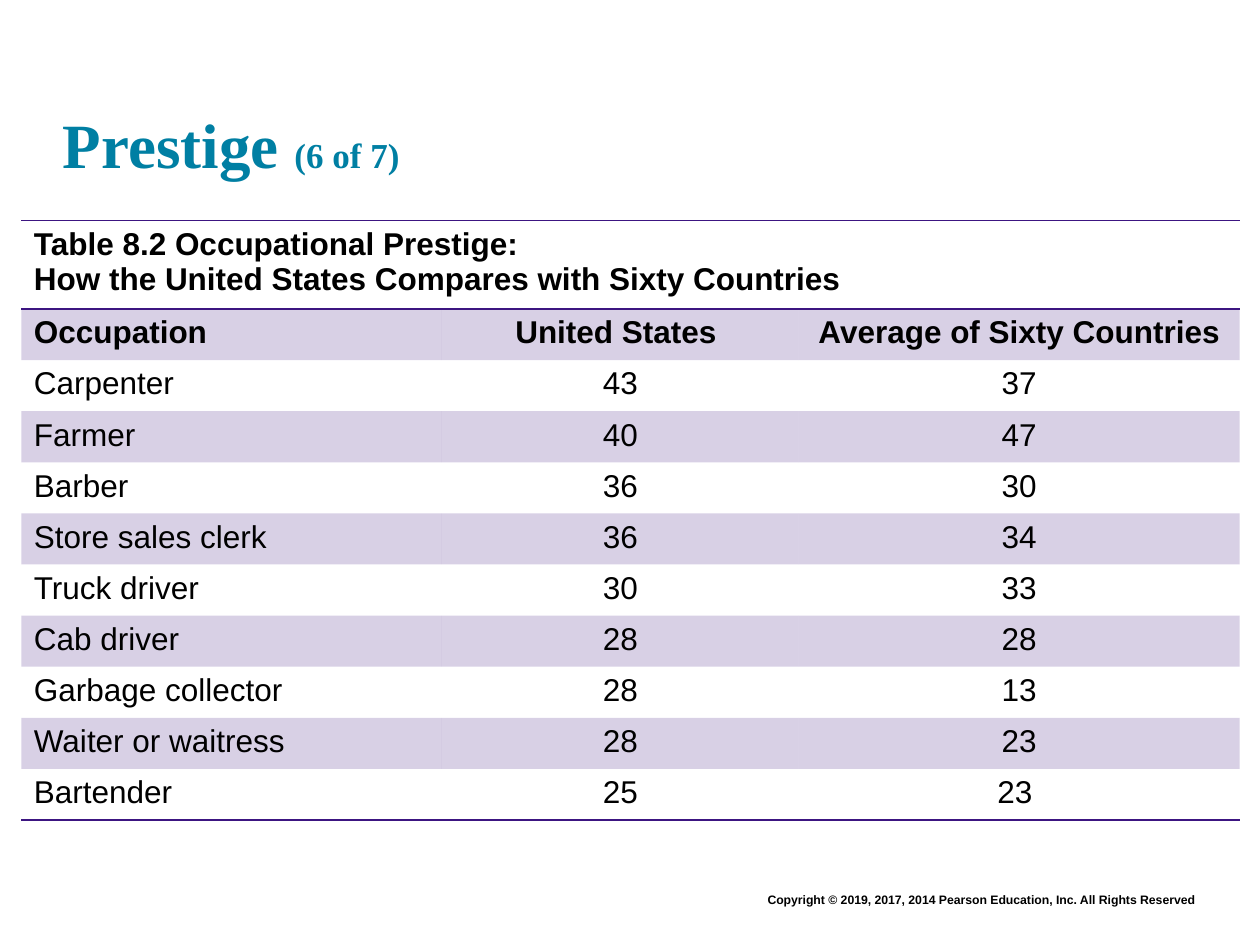
import pptx
import pptx.dml.color
import pptx.enum.text
import pptx.oxml
import pptx.oxml.ns
import pptx.util
from lxml import etree

Cm, Pt = pptx.util.Cm, pptx.util.Pt
RGBColor = pptx.dml.color.RGBColor
ALIGN = pptx.enum.text.PP_ALIGN
ANCHOR = pptx.enum.text.MSO_ANCHOR
qn = pptx.oxml.ns.qn

TEAL = RGBColor(0x00, 0x7F, 0xA3)
PURPLE = RGBColor(0x3C, 0x15, 0x81)
BLACK = RGBColor(0x00, 0x00, 0x00)

# Content
TITLE = [("Prestige ", 36), ("(6 of 7)", 20)]
COPYRIGHT = "Copyright © 2019, 2017, 2014 Pearson Education, Inc. All Rights Reserved"
CAPTION = ["Table 8.2 Occupational Prestige:",
           "How the United States Compares with Sixty Countries"]
ROWS = [
    ("Occupation", "United States ", "Average of Sixty Countries"),
    ("Carpenter", "43", "37"),
    ("Farmer", "40", "47"),
    ("Barber", "36", "30"),
    ("Store sales clerk", "36", "34"),
    ("Truck driver", "30", "33"),
    ("Cab driver", "28", "28"),
    ("Garbage collector", "28", "13"),
    ("Waiter or waitress", "28", "23"),
    ("Bartender", "25", "23 "),
]
COL_WIDTHS = [8.48, 7.19, 8.89]
CAPTION_HEIGHT, ROW_HEIGHT = 1.68, 1.03
NO_STYLE = "{2D5ABB26-0587-4C30-8999-92F81FD0307C}"

TITLE_FONT = {"name": "Times New Roman", "bold": True}
BODY_FONT = {"name": "Arial", "size": Pt(18)}
COPYRIGHT_FONT = {"name": "Arial", "size": Pt(7), "bold": True}


def add_run(p, text, color, **fmt):
    r = p.add_run()
    r.text = text
    for name, value in fmt.items():
        setattr(r.font, name, value)
    r.font.color.rgb = color


def add_text_box(s, left, top, width, height, **fmt):
    tf = s.shapes.add_textbox(Cm(left), Cm(top), Cm(width), Cm(height)).text_frame
    for name, value in {"word_wrap": True, **fmt}.items():
        setattr(tf, name, value)
    return tf.paragraphs[0]


def add_border(cell, side):
    ln = etree.SubElement(cell._tc.get_or_add_tcPr(), qn(f"a:{side}"), w=str(Pt(1)))
    fill = etree.SubElement(ln, qn("a:solidFill"))
    etree.SubElement(fill, qn("a:srgbClr"), val=str(PURPLE))


def shade(cell):
    cell.fill.solid()
    cell.fill.fore_color.rgb = PURPLE
    color = cell._tc.tcPr.find(".//" + qn("a:solidFill") + "[last()]/" + qn("a:srgbClr"))
    etree.SubElement(color, qn("a:alpha"), val="20000")


prs = pptx.Presentation()
prs.slide_width, prs.slide_height = Cm(25.4), Cm(19.05)
s = prs.slides.add_slide(prs.slide_layouts[6])

# Copyright line
p = add_text_box(s, 4.45, 17.86, 19.89, 0.56)
p.alignment = ALIGN.RIGHT
add_run(p, COPYRIGHT, BLACK, **COPYRIGHT_FONT)

# Title
p = add_text_box(s, 1.27, 0.61, 23.7, 3.05, vertical_anchor=ANCHOR.BOTTOM,
                 margin_left=0, margin_top=0, margin_right=0, margin_bottom=0)
for text, size in TITLE:
    add_run(p, text, TEAL, size=Pt(size), **TITLE_FONT)

# Table grid
heights = [CAPTION_HEIGHT] + [ROW_HEIGHT] * len(ROWS)
table = s.shapes.add_table(len(heights), len(COL_WIDTHS), Cm(0.43), Cm(4.45),
                           Cm(sum(COL_WIDTHS)), Cm(sum(heights))).table
table.first_row = table.horz_banding = False
table._tbl.tblPr.find(qn("a:tableStyleId")).text = NO_STYLE
for column, width in zip(table.columns, COL_WIDTHS):
    column.width = Cm(width)
for row, height in zip(table.rows, heights):
    row.height = Cm(height)

# Caption row
caption = table.cell(0, 0)
caption.merge(table.cell(0, len(COL_WIDTHS) - 1))
for cell in table.rows[0].cells:
    add_border(cell, "lnT")
    add_border(cell, "lnB")
    cell.fill.background()
tf = caption.text_frame
for i, line in enumerate(CAPTION):
    p = tf.add_paragraph() if i else tf.paragraphs[0]
    add_run(p, line, BLACK, bold=True, **BODY_FONT)

# Heading and data rows, every other one shaded
for i, values in enumerate(ROWS):
    for j, value in enumerate(values):
        cell = table.cell(i + 1, j)
        if i == len(ROWS) - 1:
            add_border(cell, "lnB")
        if i % 2 == 0:
            shade(cell)
        else:
            cell.fill.background()
        p = cell.text_frame.paragraphs[0]
        p.alignment = ALIGN.CENTER if j else ALIGN.LEFT
        add_run(p, value, BLACK, bold=i == 0, **BODY_FONT)

prs.save("out.pptx")
